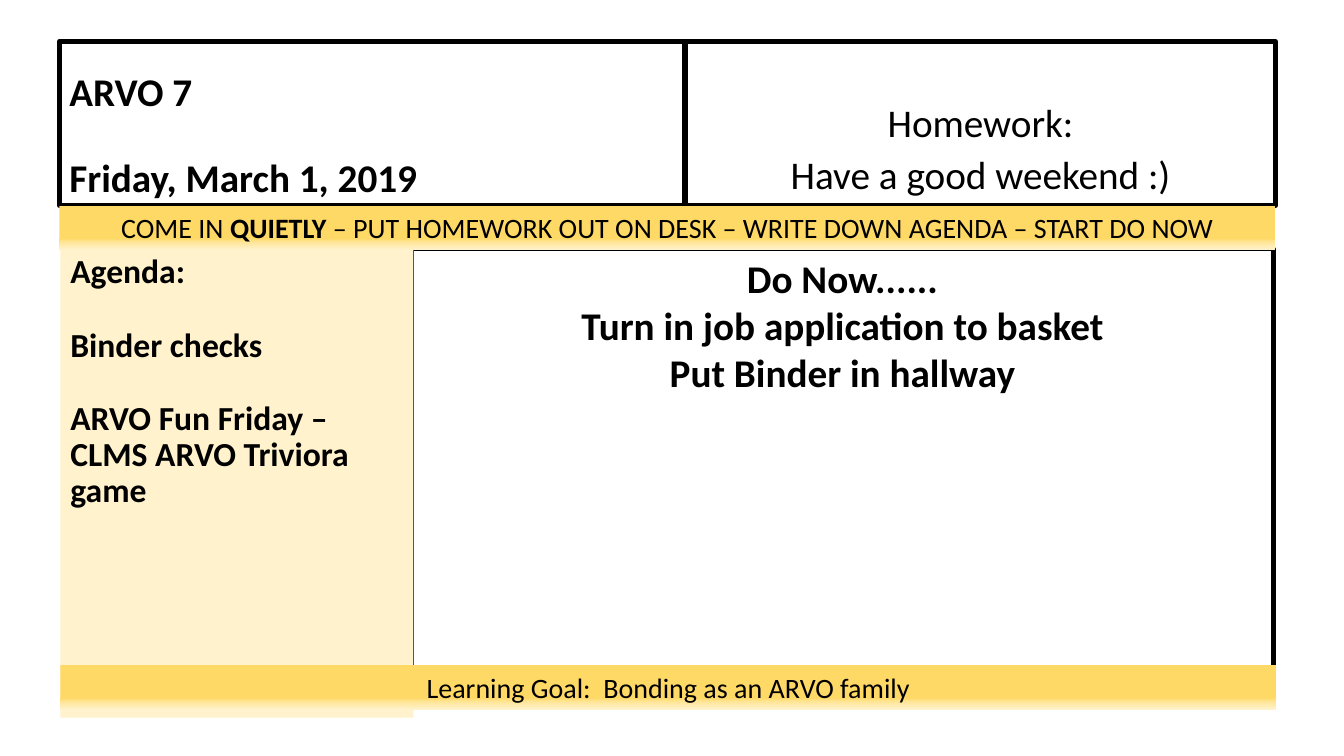
from dataclasses import dataclass

import lxml.etree
import pptx
import pptx.dml.color
import pptx.enum.shapes
import pptx.enum.text
import pptx.oxml.ns
import pptx.util

Inches = pptx.util.Inches
Pt = pptx.util.Pt
qn = pptx.oxml.ns.qn
ALIGN = pptx.enum.text.PP_ALIGN
ANCHOR = pptx.enum.text.MSO_ANCHOR

FONT = "Calibri"
BLACK = "000000"
CREAM = "FFF2CC"
BANNER_STOPS = ((0, "FFD966"), (74, "FFD966"), (83, "FFE699"), (100, CREAM))
LEFT, TOP = 0.59, 0.41
HEADER_HEIGHT = 1.63
BANNER_WIDTH, BANNER_HEIGHT = 12.06, 0.44


@dataclass
class Run:
    text: str
    bold: bool = False


@dataclass
class Line:
    runs: list[Run]
    gap: float = 0


@dataclass
class Panel:
    left: float
    top: float
    width: float
    height: float
    lines: list[Line]
    size: int
    align: ALIGN = ALIGN.CENTER
    anchor: ANCHOR = ANCHOR.TOP
    spacing: float = 1.0
    top_inset: float = 0.05
    outlined: bool = False
    fill: str = ""
    banner: bool = False


def color(value: str) -> pptx.dml.color.RGBColor:
    return pptx.dml.color.RGBColor.from_string(value)


def bold(text: str, gap: float = 0) -> Line:
    return Line([Run(text, True)], gap)


def plain(text: str, gap: float = 0) -> Line:
    return Line([Run(text)], gap)


def apply_format(target: object, values: dict) -> None:
    for name, value in values.items():
        setattr(target, name, value)


def fill_banner(sp) -> None:
    """Give the shape the four-stop gradient, running downwards."""
    sp.fill.gradient()
    grad = sp._element.spPr.find(qn("a:gradFill"))
    for child in list(grad):
        grad.remove(child)
    stops = lxml.etree.SubElement(grad, qn("a:gsLst"))
    for percent, value in BANNER_STOPS:
        stop = lxml.etree.SubElement(stops, qn("a:gs"), pos=str(percent * 1000))
        lxml.etree.SubElement(stop, qn("a:srgbClr"), val=value)
    lxml.etree.SubElement(grad, qn("a:lin"), ang="5400000", scaled="0")


def write_lines(sp, panel: Panel) -> None:
    tf = sp.text_frame
    apply_format(tf, {
        "word_wrap": True,
        "vertical_anchor": panel.anchor,
        "margin_top": Inches(panel.top_inset),
    })
    for i, line in enumerate(panel.lines):
        p = tf.add_paragraph() if i else tf.paragraphs[0]
        apply_format(p, {
            "alignment": panel.align,
            "line_spacing": panel.spacing,
            "space_before": Pt(line.gap),
        })
        for run in line.runs:
            r = p.add_run()
            r.text = run.text
            apply_format(r.font, {"name": FONT, "size": Pt(panel.size), "bold": run.bold})
            r.font.color.rgb = color(BLACK)


def draw_panel(slide, panel: Panel) -> None:
    sp = slide.shapes.add_shape(
        pptx.enum.shapes.MSO_SHAPE.RECTANGLE,
        Inches(panel.left), Inches(panel.top), Inches(panel.width), Inches(panel.height))
    sp.shadow.inherit = False
    if panel.banner:
        fill_banner(sp)
    elif panel.fill:
        sp.fill.solid()
        sp.fill.fore_color.rgb = color(panel.fill)
    else:
        sp.fill.background()
    if panel.outlined:
        sp.line.color.rgb = color(BLACK)
        sp.line.width = Pt(3.25)
    else:
        sp.line.fill.background()
    write_lines(sp, panel)


def banner(left: float, top: float, line: Line) -> Panel:
    return Panel(left, top, BANNER_WIDTH, BANNER_HEIGHT, [line], size=20, banner=True)


PANELS = [
    Panel(LEFT, TOP, 6.2, HEADER_HEIGHT,
          [bold("ARVO 7"), bold("Friday, March 1, 2019", gap=30.8)],
          size=28, align=ALIGN.LEFT, anchor=ANCHOR.BOTTOM, spacing=0.9, outlined=True),
    Panel(6.8, TOP, 5.85, HEADER_HEIGHT,
          [plain("Homework:", gap=10), plain("Have a good weekend :)", gap=10)],
          size=28, spacing=0.8, top_inset=0.66, outlined=True),
    Panel(4.08, 2.47, 8.55, 4.34,
          [bold("Do Now......"), bold("Turn in job application to basket"),
           bold("Put Binder in hallway")],
          size=28, outlined=True),
    banner(LEFT, TOP + HEADER_HEIGHT, Line([
        Run("COME IN "), Run("QUIETLY", True),
        Run(" – PUT HOMEWORK OUT ON DESK – WRITE DOWN AGENDA – START DO NOW")])),
    Panel(0.6, 2.48, 3.5, 4.64,
          [bold("Agenda:"), bold("Binder checks", gap=26.4),
           bold("ARVO Fun Friday –", gap=26.4), bold("CLMS ARVO Triviora game")],
          size=24, align=ALIGN.LEFT, spacing=0.9, fill=CREAM),
    banner(0.6, 6.6, plain("Learning Goal:  Bonding as an ARVO family")),
]


def main() -> None:
    prs = pptx.Presentation()
    prs.slide_width, prs.slide_height = Inches(13.33), Inches(7.5)
    slide = prs.slides.add_slide(prs.slide_layouts[6])
    for panel in PANELS:
        draw_panel(slide, panel)
    prs.save("out.pptx")


if __name__ == "__main__":
    main()
